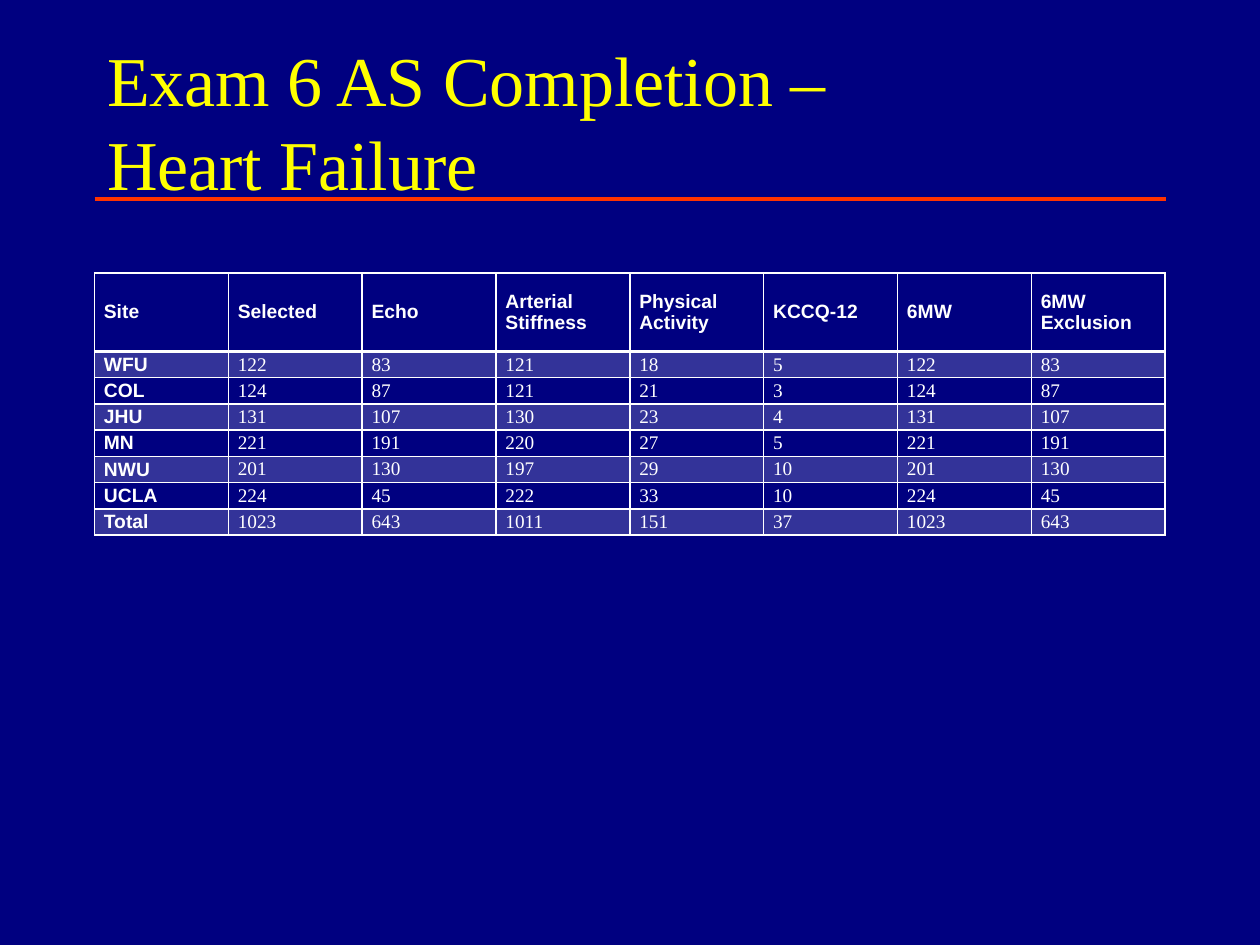
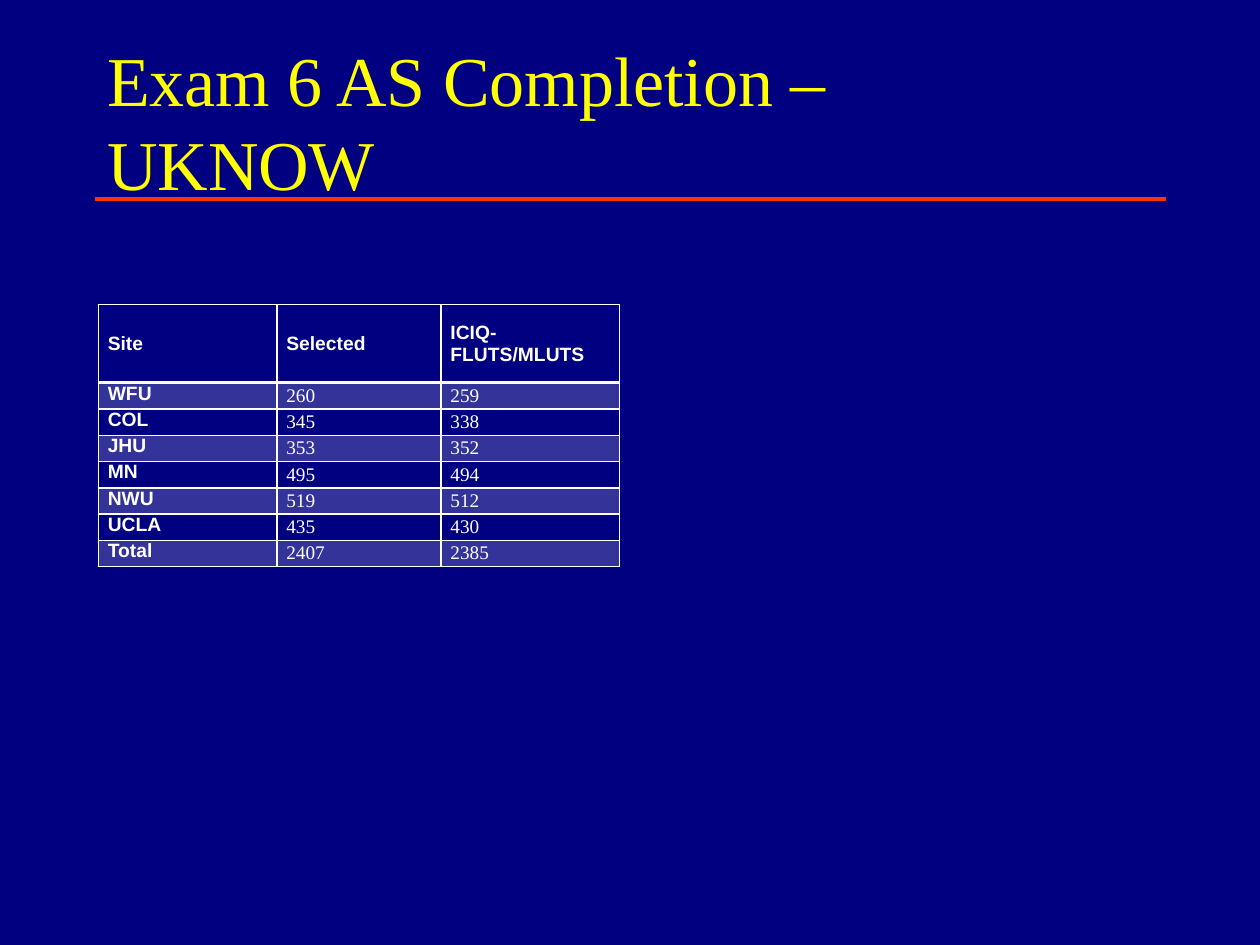
"""Build two slides of Exam 6 ancillary study completion by site."""
from lxml import etree
from pptx import Presentation
from pptx.dml.color import RGBColor
from pptx.enum.shapes import MSO_CONNECTOR
from pptx.enum.text import MSO_ANCHOR, MSO_AUTO_SIZE, PP_ALIGN
from pptx.oxml.ns import qn
from pptx.util import Pt

NAVY = RGBColor(0x00, 0x00, 0x80)
YELLOW = RGBColor(0xFF, 0xFF, 0x00)
RED = RGBColor(0xFF, 0x33, 0x00)
WHITE = RGBColor(0xFF, 0xFF, 0xFF)

STRAIGHT = MSO_CONNECTOR.STRAIGHT
TOP, MIDDLE = MSO_ANCHOR.TOP, MSO_ANCHOR.MIDDLE
LEFT = PP_ALIGN.LEFT
NO_AUTOFIT = MSO_AUTO_SIZE.NONE

SERIF, SANS = "Times New Roman", "Arial"
TITLE_ONLY = 5
MARGIN, CONTENT_WIDTH = 54, 612
HEADER_HEIGHT, ROW_HEIGHT = 44.8, 15
BAND_ALPHA = 20

SITES = ["WFU", "COL", "JHU", "MN", "NWU", "UCLA", "Total"]
HEART_FAILURE = {
    "Selected": [122, 124, 131, 221, 201, 224, 1023],
    "Echo": [83, 87, 107, 191, 130, 45, 643],
    "Arterial \vStiffness": [121, 121, 130, 220, 197, 222, 1011],
    "Physical \vActivity": [18, 21, 23, 27, 29, 33, 151],
    "KCCQ-12": [5, 3, 4, 5, 10, 10, 37],
    "6MW": [122, 124, 131, 221, 201, 224, 1023],
    "6MW \vExclusion": [83, 87, 107, 191, 130, 45, 643],
}
UKNOW = {
    "Selected": [260, 345, 353, 495, 519, 435, 2407],
    "ICIQ-\vFLUTS/MLUTS": [259, 338, 352, 494, 512, 430, 2385],
}


def set_text(text_frame, text, font, size, color, bold=False, break_size=None):
    """Fill a frame with one left-aligned paragraph, line breaks included."""
    text_frame.text = text
    paragraph = text_frame.paragraphs[0]
    paragraph.alignment = LEFT
    for run in paragraph.runs:
        run.font.name = font
        run.font.size = Pt(size)
        run.font.bold = bold
        run.font.color.rgb = color
    for line_break in paragraph._p.findall(qn("a:br")):
        properties = etree.SubElement(line_break, qn("a:rPr"))
        properties.set("sz", str((break_size or size) * 100))
        etree.SubElement(properties, qn("a:latin")).set("typeface", font)


def add_titled_slide(presentation, title):
    """Add a slide with the shared title style and red rule."""
    slide = presentation.slides.add_slide(presentation.slide_layouts[TITLE_ONLY])
    shape = slide.shapes.title
    shape.left, shape.top = Pt(MARGIN), Pt(24)
    shape.width, shape.height = Pt(CONTENT_WIDTH), Pt(90)
    shape.text_frame.vertical_anchor = MIDDLE
    shape.text_frame.auto_size = NO_AUTOFIT
    set_text(shape.text_frame, title, SERIF, 40, YELLOW, break_size=44)

    rule_y = Pt(113.75)
    rule = slide.shapes.add_connector(
        STRAIGHT, Pt(MARGIN), rule_y, Pt(MARGIN + CONTENT_WIDTH), rule_y)
    rule.line.color.rgb = RED
    rule.line.width = Pt(2)
    etree.SubElement(rule._element.spPr, qn("a:effectLst"))
    return slide


def add_border(cell, side, width):
    """Draw one white cell border."""
    line = etree.SubElement(cell._tc.get_or_add_tcPr(), qn(f"a:ln{side}"))
    line.set("w", str(Pt(width)))
    fill = etree.SubElement(line, qn("a:solidFill"))
    etree.SubElement(fill, qn("a:srgbClr")).set("val", str(WHITE))


def fill_band(cell):
    """Fill a cell with translucent white."""
    cell.fill.solid()
    cell.fill.fore_color.rgb = WHITE
    color = cell._tc.tcPr.find(qn("a:solidFill")).find(qn("a:srgbClr"))
    etree.SubElement(color, qn("a:alpha")).set("val", str(BAND_ALPHA * 1000))


def format_cell(cell, row, column, text, site_anchor):
    """Write one cell and style it by its place in the table."""
    is_label = row == 0 or column == 0
    set_text(cell.text_frame, text, SANS if is_label else SERIF, 11, WHITE, is_label)
    cell.margin_left = cell.margin_right = Pt(5.4)
    cell.margin_top = cell.margin_bottom = 0
    cell.vertical_anchor = site_anchor if row and column == 0 else MIDDLE
    for side in "LRTB":
        under_header = (row, side) in ((0, "B"), (1, "T"))
        add_border(cell, side, 2 if under_header else 1)
    if row % 2:
        fill_band(cell)
    else:
        cell.fill.background()


def add_completion_table(slide, left, top, widths, measures, site_anchor=MIDDLE):
    """Add a table of sites against completion counts."""
    rows = [["Site", *measures], *zip(SITES, *measures.values())]
    height = HEADER_HEIGHT + ROW_HEIGHT * len(SITES)
    table = slide.shapes.add_table(
        len(rows), len(widths), Pt(left), Pt(top), Pt(sum(widths)), Pt(height)).table
    table.first_row = table.horz_banding = False
    for column, width in zip(table.columns, widths):
        column.width = Pt(width)
    for row_index, values in enumerate(rows):
        table.rows[row_index].height = Pt(ROW_HEIGHT if row_index else HEADER_HEIGHT)
        for column_index, value in enumerate(values):
            cell = table.cell(row_index, column_index)
            format_cell(cell, row_index, column_index, str(value), site_anchor)


def main():
    """Build and save the presentation."""
    presentation = Presentation()
    presentation.slide_width, presentation.slide_height = Pt(720), Pt(540)
    background = presentation.slide_master.background.fill
    background.solid()
    background.fore_color.rgb = NAVY

    slide = add_titled_slide(presentation, "Exam 6 AS Completion – \vHeart Failure")
    column_count = len(HEART_FAILURE) + 1
    widths = [CONTENT_WIDTH / column_count] * column_count
    add_completion_table(slide, MARGIN, 156, widths, HEART_FAILURE)

    slide = add_titled_slide(presentation, "Exam 6 AS Completion – \vUKNOW")
    add_completion_table(slide, 56.2, 174, [102, 93.8, 102], UKNOW, TOP)

    presentation.save("out.pptx")


if __name__ == "__main__":
    main()
